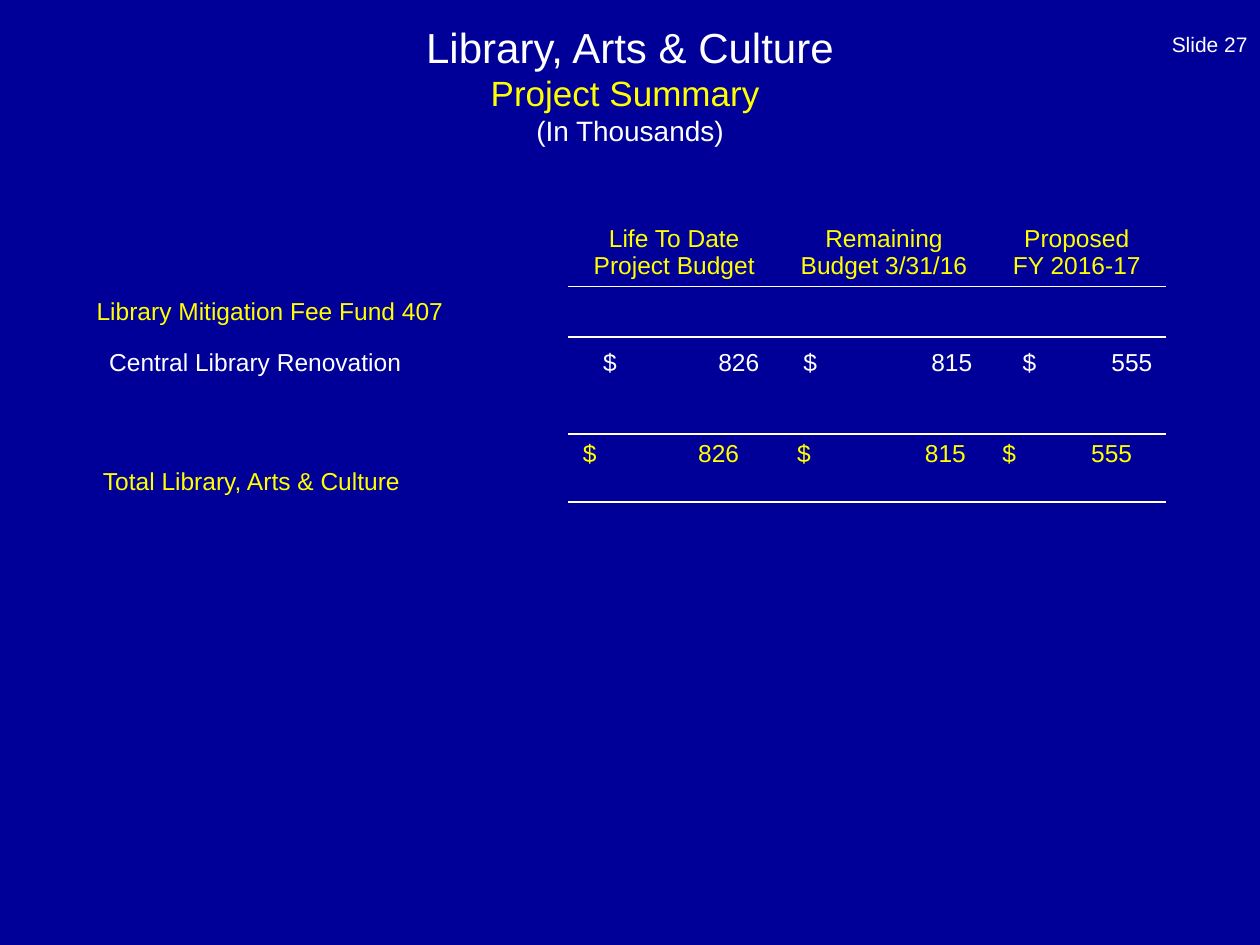
import pptx
import pptx.util
import pptx.dml.color
import pptx.enum.text
import pptx.oxml
import pptx.oxml.ns

ALIGN = pptx.enum.text.PP_ALIGN
ANCHOR = pptx.enum.text.MSO_ANCHOR
Inches = pptx.util.Inches
NO_STYLE = "{2D5ABB26-0587-4C30-8999-92F81FD0307C}"
BLUE, WHITE, YELLOW = "000099", "FFFFFF", "FFFF00"


def rgb(value):
    return pptx.dml.color.RGBColor.from_string(value)


def xml(tag, attrs, inner=""):
    return pptx.oxml.parse_xml(
        f'<a:{tag} {pptx.oxml.ns.nsdecls("a")} {attrs}>{inner}</a:{tag}>')


class Deck:
    """Style and current slide; boxes are given in cells of a 30-column grid."""

    def __init__(self, prs):
        self.unit = prs.slide_width / 30
        self.s = prs.slides.add_slide(prs.slide_layouts[5])
        self.s.background.fill.solid()
        self.s.background.fill.fore_color.rgb = rgb(BLUE)

    def box(self, *cells):
        return [round(c * self.unit) for c in cells]

    def style(self, font, size, color):
        for name, value in {"name": "Arial", "size": pptx.util.Pt(size)}.items():
            setattr(font, name, value)
        font.color.rgb = rgb(color)

    def title(self, cells, lines):
        sp = self.s.shapes.title
        for name, value in zip(("left", "top", "width", "height"), self.box(*cells)):
            setattr(sp, name, value)
        tf = sp.text_frame
        tf.auto_size = pptx.enum.text.MSO_AUTO_SIZE.NONE
        tf.vertical_anchor = ANCHOR.MIDDLE
        p = tf.paragraphs[0]
        p.alignment = ALIGN.CENTER
        for i, (text, size, color) in enumerate(lines):
            if i:
                p.add_line_break()
            r = p.add_run()
            r.text = text
            self.style(r.font, size, color)

    def label(self, cells, text, size, color):
        tf = self.s.shapes.add_textbox(*self.box(*cells)).text_frame
        tf.word_wrap = True
        tf.vertical_anchor = ANCHOR.BOTTOM
        p = tf.paragraphs[0]
        p.text = text
        p.alignment = ALIGN.RIGHT
        self.style(p.font, size, color)

    def table(self, left, top, cols, rows):
        x, y = self.box(left, top)
        frame = self.s.shapes.add_table(len(rows), len(cols), x, y,
                                        Inches(sum(cols)), Inches(sum(rows)))
        tbl = frame.table
        tbl.first_row = tbl.horz_banding = False
        tbl._tbl.tblPr.find(pptx.oxml.ns.qn("a:tableStyleId")).text = NO_STYLE
        for items, sizes, side in ((tbl.columns, cols, "width"), (tbl.rows, rows, "height")):
            for item, size in zip(items, sizes):
                setattr(item, side, Inches(size))
        for cell in tbl.iter_cells():
            cell.fill.background()
        return tbl

    def cell(self, cell, text, color, align=ALIGN.LEFT, anchor=ANCHOR.BOTTOM,
             indent=0, tab=None):
        cell.vertical_anchor = anchor
        cell.margin_left = Inches(0.1 + indent)
        p = cell.text_frame.paragraphs[0]
        p.text = text
        p.alignment = align
        if tab:
            cell.margin_right = Inches(0.05)
            stop = xml("tab", f'pos="{Inches(tab)}" algn="r"')
            tabs = xml("tabLst", "")
            tabs.append(stop)
            p._p.get_or_add_pPr().append(tabs)
        for r in p.runs:
            self.style(r.font, 14, color)

    def rule(self, tbl, row):
        """Draw a white line under a row, across the value columns."""
        edges = [(row, "lnB")] + ([(row + 1, "lnT")] if row + 1 < len(tbl.rows) else [])
        for r, tag in edges:
            for c in range(1, len(tbl.columns)):
                tcPr = tbl.cell(r, c)._tc.get_or_add_tcPr()
                at = len(tcPr.findall(pptx.oxml.ns.qn("a:lnT")))
                tcPr.insert(at, xml(
                    tag, 'w="12700"',
                    f'<a:solidFill><a:srgbClr val="{WHITE}"/></a:solidFill>'))


def main():
    prs = pptx.Presentation()
    prs.slide_width, prs.slide_height = Inches(10), Inches(7.5)
    deck = Deck(prs)

    # Slide number and heading
    deck.label((23, 0, 7, 1.5), "Slide 27", 12, WHITE)
    deck.title((1, 1, 28, 2), [("Library, Arts & Culture", 24, WHITE),
                               ("Project Summary ", 20, YELLOW),
                               ("(In Thousands)", 16, WHITE)])

    # Budget table: headings and row labels
    tbl = deck.table(2, 4, (3.84, 1.69, 1.64, 1.42), (0.94, 0.37, 0.37, 0.37, 0.54))
    heads = ("Life To Date\vProject Budget", "Remaining\vBudget 3/31/16",
             "Proposed\vFY 2016-17")
    for c, head in enumerate(heads, 1):
        deck.cell(tbl.cell(0, c), head, YELLOW, ALIGN.CENTER)
    deck.cell(tbl.cell(1, 0), "Library Mitigation Fee Fund 407", YELLOW,
              anchor=ANCHOR.MIDDLE)
    deck.cell(tbl.cell(2, 0), "Central Library Renovation", WHITE, indent=0.1)
    deck.cell(tbl.cell(4, 0), "Total Library, Arts & Culture", YELLOW, indent=0.05)

    # Amounts: dollar sign at the left, figure on a right-hand tab
    amounts, tabs = (826, 815, 555), (1.24, 1.34, 1.03)
    value_rows = ((2, WHITE, ANCHOR.BOTTOM, (0.18, 0.08, 0.18)),
                  (4, YELLOW, ANCHOR.TOP, (0.02, 0.03, 0.02)))
    for row, color, anchor, indents in value_rows:
        for c, (amount, tab, indent) in enumerate(zip(amounts, tabs, indents), 1):
            deck.cell(tbl.cell(row, c), f"$\t{amount}", color, anchor=anchor,
                      indent=indent, tab=tab)

    # Lines under the headings and around the total
    for row in (0, 3, 4):
        deck.rule(tbl, row)
    prs.save("out.pptx")


if __name__ == "__main__":
    main()
